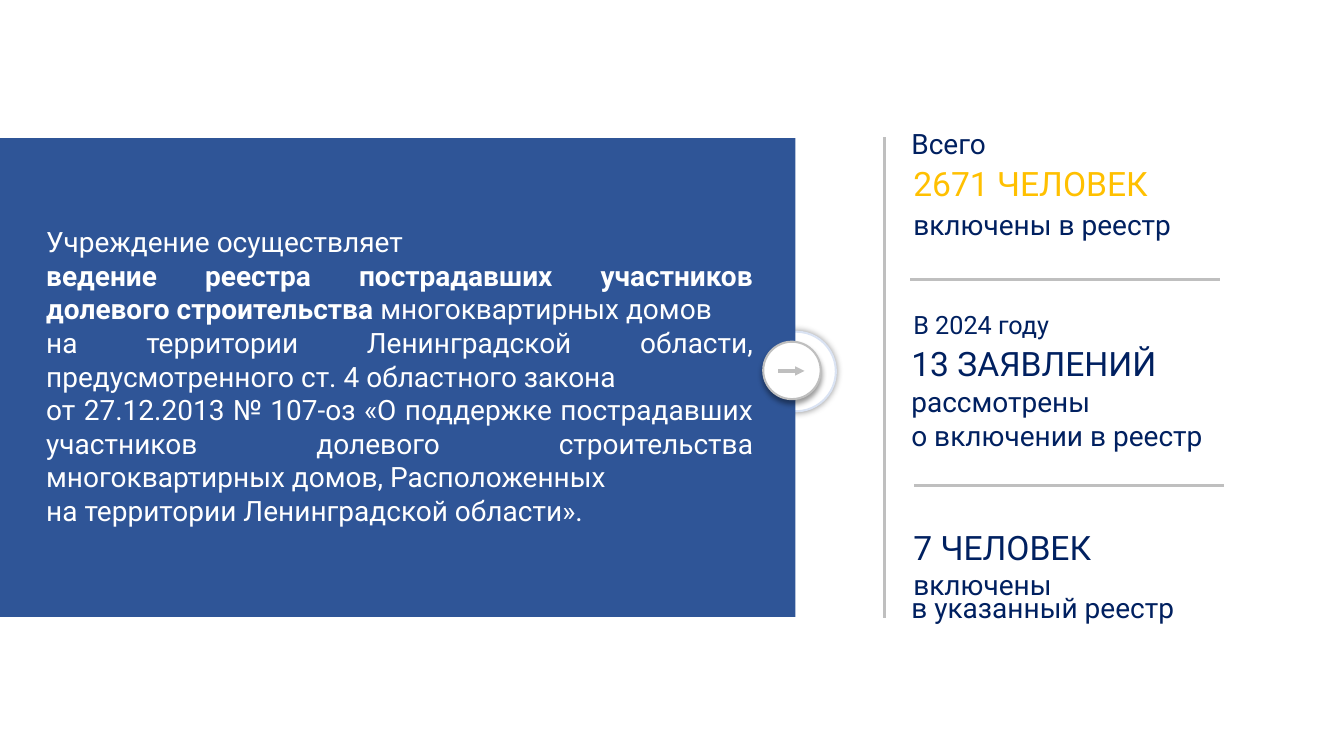
"""Build the slide on the register of affected shared-construction participants."""
from dataclasses import dataclass

from lxml import etree
from pptx import Presentation
from pptx.dml.color import RGBColor
from pptx.enum.shapes import MSO_CONNECTOR, MSO_SHAPE
from pptx.enum.text import MSO_AUTO_SIZE as AutoSize, PP_ALIGN
from pptx.oxml import parse_xml
from pptx.oxml.ns import nsdecls, qn
from pptx.shapes.autoshape import Shape
from pptx.shapes.connector import Connector
from pptx.slide import Slide
from pptx.util import Inches, Pt

FONT = "Roboto"
WHITE, BLUE, NAVY, GOLD, GREY, PALE = (
    "FFFFFF", "2F5597", "002060", "FFC000", "BFBFBF", "DAE3F3")


@dataclass(frozen=True)
class Shadow:
    blur: float
    distance: float
    angle: int


@dataclass(frozen=True)
class Disc:
    left: float
    top: float
    size: float
    outline: str
    shadow: Shadow


@dataclass(frozen=True)
class Label:
    left: float
    top: float
    width: float
    height: float
    lines: tuple[str, ...]
    size: int = 20
    color: str = NAVY
    indented: bool = False


@dataclass(frozen=True)
class Rule:
    x1: float
    y1: float
    x2: float
    y2: float
    arrow: bool = False


HALO = Disc(7.5, 3.29, 0.79, PALE, Shadow(5, 0, 0))
BUTTON = Disc(7.57, 3.39, 0.57, GREY, Shadow(4, 3, 90))

MISSION = (
    (("Учреждение осуществляет", False),),
    (("ведение реестра пострадавших участников долевого строительства", True),
     (" многоквартирных домов", False)),
    (("на территории Ленинградской области, предусмотренного ст. 4 "
      "областного закона", False),),
    (("от 27.12.2013 № 107-оз «О поддержке пострадавших участников долевого "
      "строительства многоквартирных домов, Расположенных", False),),
    (("на территории Ленинградской области».", False),),
)

LABELS = (
    Label(8.94, 1.21, 3.09, 0.44, ("Всего",)),
    Label(8.96, 1.57, 4.2, 0.5, ("2671 ЧЕЛОВЕК",), 24, GOLD),
    Label(8.47, 1.96, 4.8, 0.47, ("включены в реестр",), indented=True),
    Label(8.96, 3.02, 4.2, 0.4, ("В 2024 году",), 18),
    Label(8.94, 3.35, 4.28, 0.5, ("13 ЗАЯВЛЕНИЙ",), 24),
    Label(8.94, 3.77, 3.59, 0.77, ("рассмотрены", "о включении в реестр")),
    Label(8.96, 5.18, 3.91, 0.5, ("7 ЧЕЛОВЕК",), 24),
    Label(8.47, 5.53, 2.87, 0.47, ("включены",), indented=True),
    Label(8.94, 5.81, 3.91, 0.44, ("в указанный реестр",)),
)

RULES = (
    Rule(7.72, 3.68, 7.98, 3.68, arrow=True),
    Rule(9.03, 2.77, 12.1, 2.77),
    Rule(9.07, 4.82, 12.14, 4.82),
    Rule(8.77, 1.36, 8.77, 6.13),
)


def rgb(value: str) -> RGBColor:
    """Turn a hex string into a colour."""
    return RGBColor.from_string(value)


def add_disc(slide: Slide, disc: Disc) -> Shape:
    """Draw a white circle with an outline and a soft shadow."""
    circle = slide.shapes.add_shape(
        MSO_SHAPE.OVAL, Inches(disc.left), Inches(disc.top),
        Inches(disc.size), Inches(disc.size))
    circle.fill.solid()
    circle.fill.fore_color.rgb = rgb(WHITE)
    circle.line.color.rgb = rgb(disc.outline)
    circle.line.width = Pt(1.5)
    circle.shadow.inherit = False
    shadow = disc.shadow
    circle.element.spPr.find(qn("a:effectLst")).append(parse_xml(
        f'<a:outerShdw {nsdecls("a")} blurRad="{Pt(shadow.blur)}" '
        f'dist="{Pt(shadow.distance)}" dir="{shadow.angle * 60000}" '
        'algn="ctr" rotWithShape="0"><a:srgbClr val="000000">'
        '<a:alpha val="40000"/></a:srgbClr></a:outerShdw>'))
    return circle


def add_panel(slide: Slide) -> Shape:
    """Draw the blue panel behind the mission statement."""
    panel = slide.shapes.add_shape(
        MSO_SHAPE.RECTANGLE, Inches(0), Inches(1.37), Inches(7.89), Inches(4.75))
    panel.fill.solid()
    panel.fill.fore_color.rgb = rgb(BLUE)
    panel.line.fill.background()
    panel.shadow.inherit = False
    return panel


def add_text(slide: Slide, left: float, top: float, width: float,
             height: float, count: int, size: int, color: str) -> list:
    """Add a wrapped text box and return its styled, empty paragraphs."""
    frame = slide.shapes.add_textbox(
        Inches(left), Inches(top), Inches(width), Inches(height)).text_frame
    frame.word_wrap = True
    frame.auto_size = AutoSize.SHAPE_TO_FIT_TEXT
    for _ in range(count - 1):
        frame.add_paragraph()
    for paragraph in frame.paragraphs:
        paragraph.font.name = FONT
        paragraph.font.size = Pt(size)
        paragraph.font.color.rgb = rgb(color)
    return list(frame.paragraphs)


def add_mission(slide: Slide) -> None:
    """Write the justified mission statement."""
    paragraphs = add_text(slide, 0.36, 2.18, 7.21, 3.13, len(MISSION), 20, WHITE)
    for paragraph, parts in zip(paragraphs, MISSION):
        paragraph.alignment = PP_ALIGN.JUSTIFY
        for text, bold in parts:
            run = paragraph.add_run()
            run.text = text
            if bold:
                run.font.bold = True


def add_label(slide: Slide, label: Label) -> None:
    """Write one line or pair of lines of the statistics."""
    paragraphs = add_text(slide, label.left, label.top, label.width,
                          label.height, len(label.lines), label.size, label.color)
    for paragraph, line in zip(paragraphs, label.lines):
        paragraph.add_run().text = line
        if label.indented:
            paragraph.line_spacing = 1.15
            paragraph.space_after = Pt(10)
            paragraph._p.get_or_add_pPr().set("indent", str(Inches(0.49)))


def add_rule(slide: Slide, rule: Rule) -> Connector:
    """Draw a grey line, with an arrowhead if asked."""
    line = slide.shapes.add_connector(
        MSO_CONNECTOR.STRAIGHT, Inches(rule.x1), Inches(rule.y1),
        Inches(rule.x2), Inches(rule.y2))
    line.line.color.rgb = rgb(GREY)
    line.line.width = Pt(2.25)
    properties = line.element.spPr
    if rule.arrow:
        etree.SubElement(properties.find(qn("a:ln")), qn("a:tailEnd"), type="triangle")
    etree.SubElement(properties, qn("a:effectLst"))
    return line


def main() -> None:
    """Assemble and save the slide."""
    deck = Presentation()
    deck.slide_width, deck.slide_height = Inches(13.33), Inches(7.5)
    slide = deck.slides.add_slide(deck.slide_layouts[6])
    add_disc(slide, HALO)
    add_panel(slide)
    add_mission(slide)
    for label in LABELS:
        add_label(slide, label)
    add_disc(slide, BUTTON)
    for rule in RULES:
        add_rule(slide, rule)
    deck.save("out.pptx")


if __name__ == "__main__":
    main()
